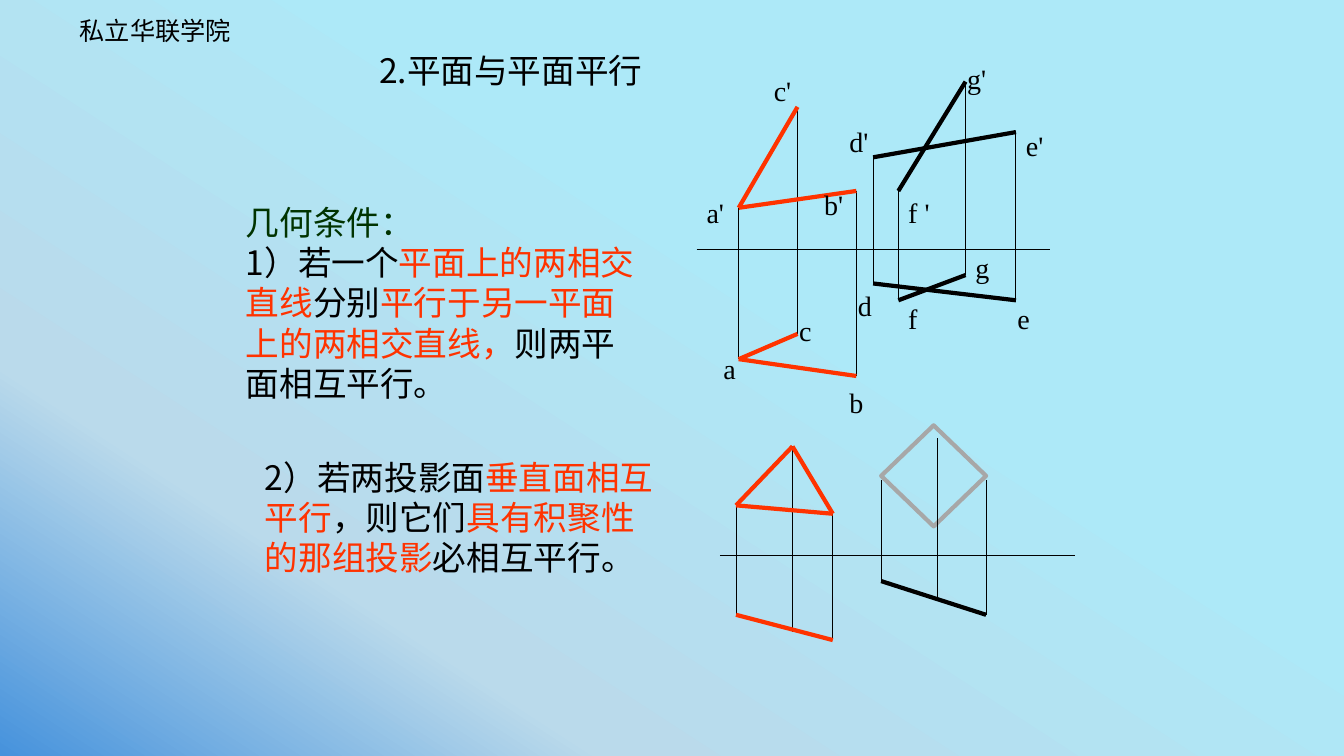
from copy import deepcopy

from lxml import etree
from pptx import Presentation
from pptx.dml.color import RGBColor
from pptx.enum.shapes import MSO_CONNECTOR, MSO_SHAPE
from pptx.enum.text import MSO_ANCHOR, MSO_AUTO_SIZE, PP_ALIGN
from pptx.oxml.ns import qn
from pptx.util import Inches, Pt

STRAIGHT = MSO_CONNECTOR.STRAIGHT
DIAMOND = MSO_SHAPE.DIAMOND
TOP = MSO_ANCHOR.TOP
LEFT = PP_ALIGN.LEFT
NO_AUTOFIT = MSO_AUTO_SIZE.NONE

COLORS = {
    "black": "000000", "red": "FF3300", "green": "003300", "gray": "A7A7A7",
    "deep": "4692DC", "pale": "BADAEB", "cyan": "ADE9F8",
}
BACKDROP = [(0, "deep"), (0.24, "pale"), (0.62, "cyan")]
CJK = "Noto Sans CJK SC"
CJK_HEADER = "Noto Sans CJK JP"
LATIN = "Times New Roman"
THIN, THICK = 0.75, 3

INTERSECTING_POINTS = {
    "a'": (5, 15), "b'": (19, 13), "c'": (12, 3),
    "a": (5, 33), "b": (19, 35), "c": (12, 30),
    "d'": (21, 9), "e'": (38, 6), "f '": (24, 13), "g'": (32, 0),
    "d": (21, 24), "e": (38, 26), "f": (24, 26), "g": (32, 23),
}
INTERSECTING_LABELS = {
    "a'": (0, 13), "b'": (14, 12), "c'": (8, -1.5),
    "a": (2, 31.5), "b": (17, 35.5), "c": (11, 27),
    "d'": (17, 4.5), "e'": (38, 5), "f '": (24, 13), "g'": (31, -3),
    "d": (18, 24), "e": (37, 25.5), "f": (24, 25.5), "g": (32, 19.5),
}
INTERSECTING_SIDES = [
    ("c'", "a'", "red"), ("a'", "b'", "red"), ("c", "a", "red"), ("a", "b", "red"),
    ("g'", "f '", "black"), ("d'", "e'", "black"),
    ("f", "g", "black"), ("d", "e", "black"),
]
INTERSECTING_RAYS = [("a'", "a"), ("b'", "b"), ("c'", "c"), ("d'", "d"),
                     ("e'", "e"), ("f '", "f"), ("g'", "g")]

VERTICAL_POINTS = {
    "left": (2, 9.5), "apex": (9, 2.5), "right": (14, 10.5),
    "left foot": (2, 22.5), "apex foot": (9, 24.5), "right foot": (14, 25.5),
    "west": (20, 6.5), "middle": (27, 1.5), "east": (33, 6.5),
    "west foot": (20, 18.5), "middle foot": (27, 20.5), "east foot": (33, 22.5),
}
VERTICAL_SIDES = [
    ("apex", "right", "red"), ("apex", "left", "red"), ("left", "right", "red"),
    ("left foot", "right foot", "red"), ("west foot", "east foot", "black"),
]
VERTICAL_RAYS = [(name, name + " foot")
                 for name in ("left", "apex", "right", "west", "middle", "east")]


def color(name):
    """Return the named colour."""
    return RGBColor.from_string(COLORS[name])


def write(frame, paragraphs, size=24, font=CJK, pitch=1.2, inset=0.1):
    """Fill a text frame with paragraphs of (text, colour) runs."""
    frame.word_wrap = True
    frame.auto_size = NO_AUTOFIT
    frame.vertical_anchor = TOP
    frame.margin_left = frame.margin_right = Inches(inset)
    frame.margin_top = frame.margin_bottom = Inches(0.05)
    for index, pieces in enumerate(paragraphs):
        paragraph = frame.add_paragraph() if index else frame.paragraphs[0]
        paragraph.alignment = LEFT
        paragraph.space_before = Pt(0)
        paragraph.line_spacing = Pt(size * pitch) if pitch else 1.0
        for text, tint in pieces:
            run = paragraph.add_run()
            run.text = text
            run.font.size = Pt(size)
            run.font.color.rgb = color(tint)
            run.font.name = font
            latin = run.font._element.find(qn("a:latin"))
            east_asian = etree.Element(qn("a:ea"), typeface=font)
            latin.addnext(east_asian)


def add_text(shapes, box, paragraphs, **style):
    """Place a text box at box, given in inches."""
    frame = shapes.add_textbox(*map(Inches, box)).text_frame
    write(frame, paragraphs, **style)


def add_line(shapes, start, end, tint="black", weight=THIN):
    """Draw a line between two points given in inches."""
    line = shapes.add_connector(STRAIGHT, *map(Inches, (*start, *end)))
    line.line.color.rgb = color(tint)
    line.line.width = Pt(weight)
    etree.SubElement(line._element.spPr, qn("a:effectLst"))


def grid(box, columns, rows):
    """Return a function from grid coordinates to slide inches."""
    left, top, width, height = box
    return lambda cell: (left + cell[0] * width / columns, top + cell[1] * height / rows)


def draw_projection(shapes, place, points, sides, rays, axis):
    """Draw the axis, projection rays and plane sides of one figure."""
    add_line(shapes, *map(place, axis))
    for start, end in rays:
        add_line(shapes, place(points[start]), place(points[end]))
    for start, end, tint in sides:
        add_line(shapes, place(points[start]), place(points[end]), tint, THICK)


def intersecting_figure(slide, box):
    """Draw two planes given by intersecting lines, with lettered points."""
    shapes = slide.shapes.add_group_shape().shapes
    place = grid(box, 42, 35)
    draw_projection(shapes, place, INTERSECTING_POINTS, INTERSECTING_SIDES,
                    INTERSECTING_RAYS, [(0, 20), (42, 20)])
    for letter, cell in INTERSECTING_LABELS.items():
        add_text(shapes, (*place(cell), 0.6, 0.43), [[(letter, "black")]],
                 size=20, font=LATIN, pitch=None)


def vertical_figure(slide, box):
    """Draw a triangle and a diamond standing on parallel vertical planes."""
    shapes = slide.shapes.add_group_shape().shapes
    place = grid(box, 44, 25.5)
    (left, top), (right, bottom) = place((20, 0)), place((33, 12))
    diamond = shapes.add_shape(
        DIAMOND, *map(Inches, (left, top, right - left, bottom - top)))
    diamond.shadow.inherit = False
    diamond.fill.background()
    diamond.line.color.rgb = color("gray")
    diamond.line.width = Pt(THICK)
    draw_projection(shapes, place, VERTICAL_POINTS, VERTICAL_SIDES,
                    VERTICAL_RAYS, [(0, 15.5), (44, 15.5)])


def paint_background(slide):
    """Give the slide its diagonal three-stop gradient."""
    fill = slide.background.fill
    fill.gradient()
    fill.gradient_angle = 57
    first_stop = slide.element.find(".//" + qn("a:gsLst"))[0]
    first_stop.addnext(deepcopy(first_stop))
    for stop, (position, tint) in zip(fill.gradient_stops, BACKDROP):
        stop.position = position
        stop.color.rgb = color(tint)


def place_title(slide, box):
    """Move the title placeholder to box and write the heading."""
    title = slide.shapes.title
    title.left, title.top, title.width, title.height = map(Inches, box)
    write(title.text_frame, [[("2.平面与平面平行", "black")]])


def conditions(slide, first_box, second_box):
    """Write the two geometric conditions."""
    add_text(slide.shapes, first_box, [
        [("几何条件：", "green")],
        [("1）若一个", "black"), ("平面上的两相交直线", "red"), ("分别", "black"),
         ("平行于另一平面上的两相交直线，", "red"), ("则两平面相互平行。", "black")],
    ])
    add_text(slide.shapes, second_box, [
        [("2）若两投影面", "black"), ("垂直面相互平行", "red"), ("，则它们", "black"),
         ("具有积聚性的那组投影", "red"), ("必相互平行。", "black")],
    ])


def main():
    """Build and save the slide."""
    deck = Presentation()
    deck.slide_width, deck.slide_height = Inches(13.33), Inches(7.5)
    slide = deck.slides.add_slide(deck.slide_layouts[5])
    paint_background(slide)
    add_text(slide.shapes, (0.74, 0.1, 2.94, 0.4), [[("私立华联学院", "black")]],
             size=18, font=CJK_HEADER, inset=0.05)
    place_title(slide, (3.66, 0.44, 3.91, 0.77))
    conditions(slide, (2.34, 1.95, 4.05, 2.39), (2.53, 4.48, 4.14, 1.31))
    intersecting_figure(slide, (6.91, 0.81, 3.5, 2.92))
    vertical_figure(slide, (7.14, 4.22, 3.52, 2.13))
    deck.save("out.pptx")


if __name__ == "__main__":
    main()
